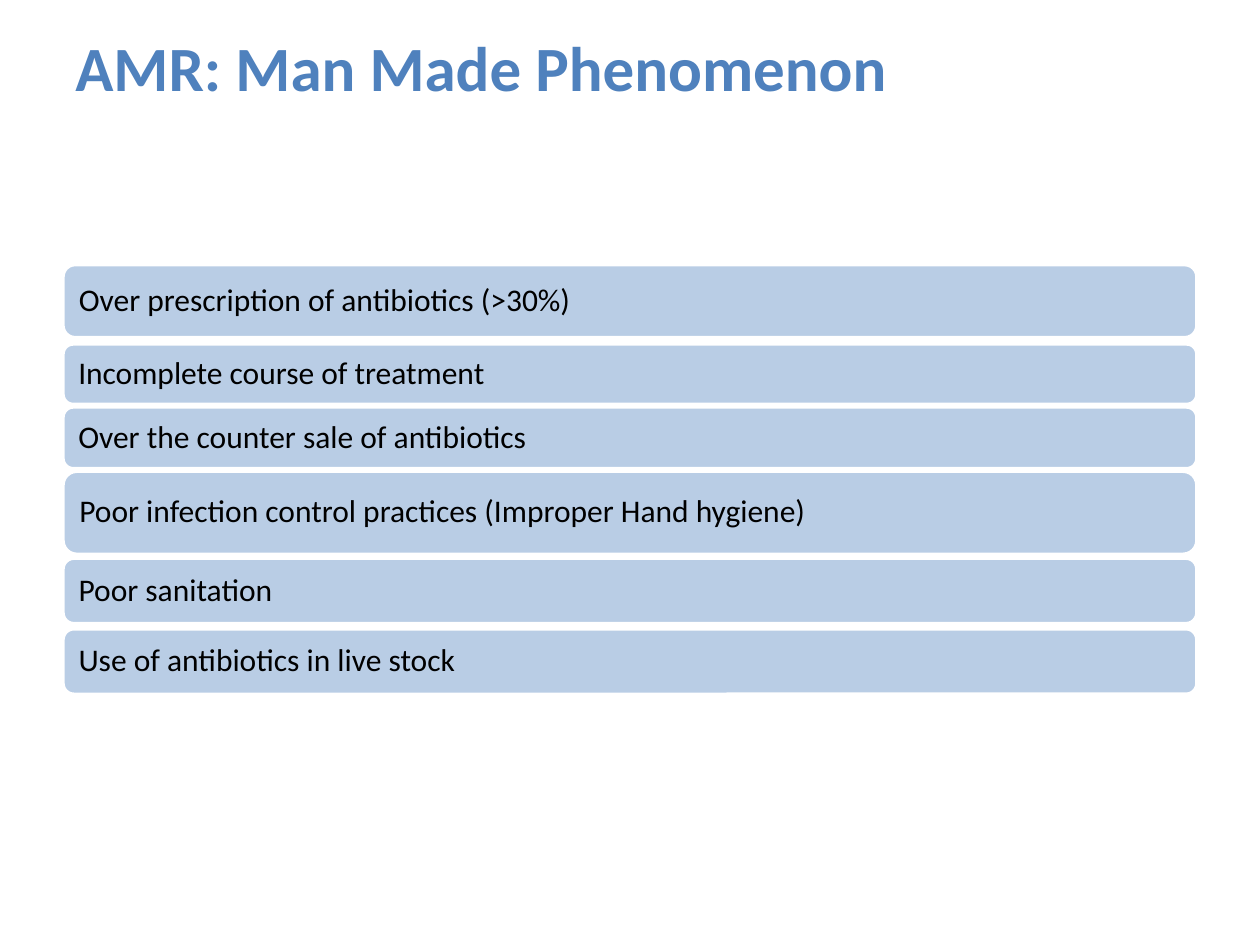
import pptx
import pptx.dml.color
import pptx.enum.shapes
import pptx.enum.text
import pptx.util

BLUE = pptx.dml.color.RGBColor(0x4F, 0x81, 0xBD)
PALE_BLUE = pptx.dml.color.RGBColor(0xB9, 0xCD, 0xE5)
WHITE = pptx.dml.color.RGBColor(0xFF, 0xFF, 0xFF)
BLACK = pptx.dml.color.RGBColor(0x00, 0x00, 0x00)

COLUMNS, ROWS = 100, 75
MARGIN = 5
CAUSES = [
    (21, 5.8, "Over prescription of antibiotics (>30%)"),
    (27.3, 4.8, "Incomplete course of treatment"),
    (32.3, 4.9, "Over the counter sale of antibiotics"),
    (37.4, 6.6, "Poor infection control practices (Improper Hand hygiene)"),
    (44.3, 5.2, "Poor sanitation"),
    (49.9, 5.2, "Use of antibiotics in live stock"),
]


class CauseSlide:
    """Draws a heading and rounded bars on a grid of columns and rows."""

    font_name = "Calibri"
    inset = pptx.util.Inches(0.1)

    def __init__(self, deck):
        self.page = deck.slides.add_slide(deck.slide_layouts[6])
        self.column = deck.slide_width / COLUMNS
        self.row = deck.slide_height / ROWS

    def place(self, left, top, width, height):
        return (round(left * self.column), round(top * self.row),
                round(width * self.column), round(height * self.row))

    def label(self, box, text, size, color, bold=False):
        frame = box.text_frame
        frame.word_wrap = True
        frame.vertical_anchor = pptx.enum.text.MSO_ANCHOR.MIDDLE
        frame.margin_left = frame.margin_right = self.inset
        frame.margin_top = frame.margin_bottom = 0
        para = frame.paragraphs[0]
        para.text = text
        para.alignment = pptx.enum.text.PP_ALIGN.LEFT
        para.font.name = self.font_name
        para.font.size = pptx.util.Pt(size)
        para.font.bold = bold
        para.font.color.rgb = color
        return para

    def heading(self, text):
        box = self.page.shapes.add_textbox(*self.place(MARGIN, 3, 84.4, 4.6))
        self.label(box, text, 36, BLUE, bold=True)

    def bar(self, top, height, text):
        bar = self.page.shapes.add_shape(
            pptx.enum.shapes.MSO_SHAPE.ROUNDED_RECTANGLE,
            *self.place(MARGIN, top, COLUMNS - 2 * MARGIN, height))
        bar.shadow.inherit = False
        bar.fill.solid()
        bar.fill.fore_color.rgb = PALE_BLUE
        bar.line.color.rgb = WHITE
        bar.line.width = pptx.util.Pt(2)
        self.label(bar, text, 18, BLACK).line_spacing = 0.9


def main():
    deck = pptx.Presentation()
    deck.slide_width = pptx.util.Inches(10)
    deck.slide_height = pptx.util.Inches(7.5)
    slide = CauseSlide(deck)
    slide.heading("AMR: Man Made Phenomenon")
    for top, height, cause in CAUSES:
        slide.bar(top, height, cause)
    deck.save("out.pptx")


if __name__ == "__main__":
    main()
